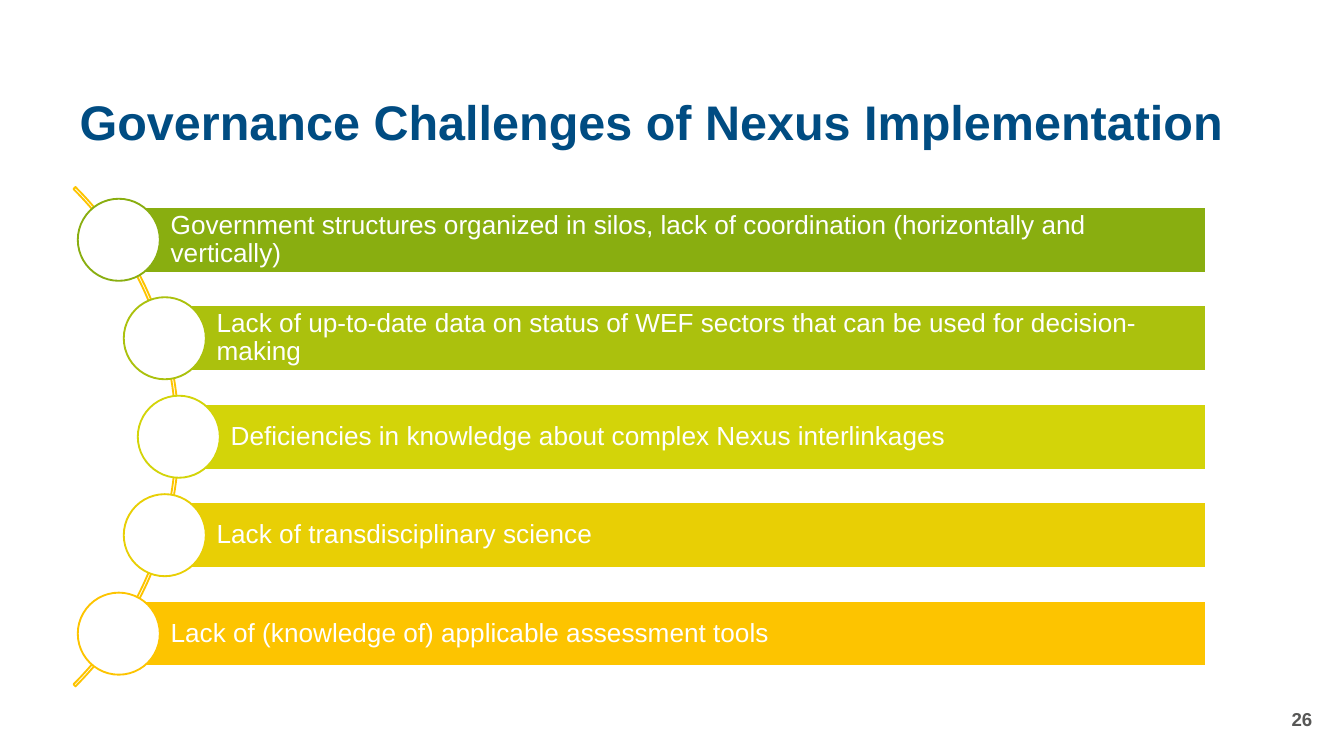
"""Build the slide on governance challenges of Nexus implementation."""
from math import sqrt

from pptx import Presentation
from pptx.dml.color import RGBColor
from pptx.enum.shapes import MSO_SHAPE
from pptx.enum.text import MSO_ANCHOR, MSO_AUTO_SIZE, PP_ALIGN
from pptx.util import Cm, Pt

ARC, RECT, OVAL = MSO_SHAPE.BLOCK_ARC, MSO_SHAPE.RECTANGLE, MSO_SHAPE.OVAL
MIDDLE = MSO_ANCHOR.MIDDLE
NO_FIT = MSO_AUTO_SIZE.NONE
LEFT, RIGHT = PP_ALIGN.LEFT, PP_ALIGN.RIGHT

WHITE, BLUE, GREY, AMBER = "FFFFFF", "004C82", "575756", "FDC400"
CHALLENGES = [
    ("Government structures organized in silos, lack of coordination "
     "(horizontally and vertically)", "89AE10"),
    ("Lack of up-to-date data on status of WEF sectors that can be used "
     "for decision-making", "ABC10D"),
    ("Deficiencies in knowledge about complex Nexus interlinkages", "D3D409"),
    ("Lack of transdisciplinary science", "E8CF05"),
    ("Lack of (knowledge of) applicable assessment tools", AMBER),
]
ARC_X, ARC_Y, ARC_R = -3.29, 8.25, 6.67
PITCH, BAR_H, BAR_RIGHT, DOT = 1.86, 1.24, 22.79, 1.55


def rgb(value):
    return RGBColor.from_string(value)


class Deck:
    def __init__(self, font):
        self.font = font
        self.prs = Presentation()
        self.prs.slide_width, self.prs.slide_height = Cm(25.4), Cm(14.28)
        self.s = self.prs.slides.add_slide(self.prs.slide_layouts[5])

    def set_text(self, sp, text, size, color, bold=False, align=LEFT, spacing=0.9):
        tf = sp.text_frame
        tf.text = text
        tf.word_wrap = True
        tf.auto_size = NO_FIT
        tf.vertical_anchor = MIDDLE
        p = tf.paragraphs[0]
        p.alignment, p.line_spacing = align, spacing
        font = p.runs[0].font
        font.name, font.size, font.bold = self.font, Pt(size), bold
        font.color.rgb = rgb(color)

    def title(self, text, x, y, w, h):
        sp = self.s.shapes.title
        sp.left, sp.top, sp.width, sp.height = Cm(x), Cm(y), Cm(w), Cm(h)
        self.set_text(sp, text, 26, BLUE, bold=True)

    def shape(self, kind, x, y, w, h, fill, line):
        sp = self.s.shapes.add_shape(kind, Cm(x), Cm(y), Cm(w), Cm(h))
        sp.shadow.inherit = False
        if fill:
            sp.fill.solid()
            sp.fill.fore_color.rgb = rgb(fill)
        else:
            sp.fill.background()
        sp.line.color.rgb = rgb(line)
        sp.line.width = Pt(1)
        return sp

    def arc(self, x, y, radius, color):
        sp = self.shape(ARC, x - radius, y - radius, 2 * radius, 2 * radius, None, color)
        for i, value in enumerate((189, 27, 0.004)):
            sp.adjustments[i] = value

    def bar(self, x, y, text, color):
        sp = self.shape(RECT, x, y - BAR_H / 2, BAR_RIGHT - x, BAR_H, color, WHITE)
        self.set_text(sp, text, 14, WHITE)
        tf = sp.text_frame
        tf.margin_left = Cm(0.98)
        tf.margin_right = tf.margin_top = tf.margin_bottom = Cm(0.09)

    def dot(self, x, y, color):
        self.shape(OVAL, x - DOT / 2, y - DOT / 2, DOT, DOT, WHITE, color)

    def page_number(self, text, x, y, w, h):
        sp = self.s.shapes.add_textbox(Cm(x), Cm(y), Cm(w), Cm(h))
        self.set_text(sp, text, 10, GREY, bold=True, align=RIGHT, spacing=1.0)


def main():
    deck = Deck("Arial")
    deck.title("Governance Challenges of Nexus Implementation", 1.25, 1.6, 23.8, 1.5)
    deck.arc(ARC_X, ARC_Y, ARC_R, AMBER)
    for i, (text, color) in enumerate(CHALLENGES):
        dy = (i - len(CHALLENGES) // 2) * PITCH
        x = ARC_X + sqrt(ARC_R ** 2 - dy ** 2)
        deck.bar(x, ARC_Y + dy, text, color)
        deck.dot(x, ARC_Y + dy, color)
    deck.page_number("26", 19.33, 13.21, 5.72, 0.76)
    deck.prs.save("out.pptx")


if __name__ == "__main__":
    main()
